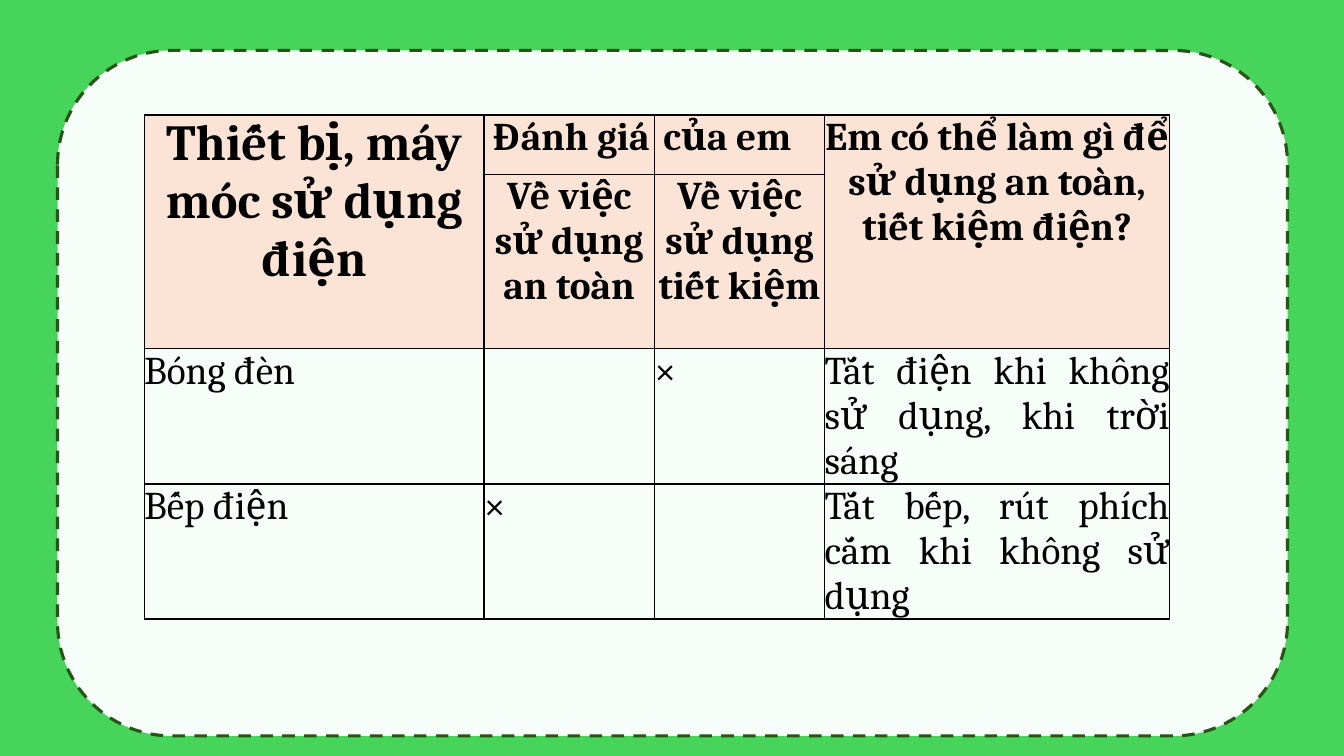
from dataclasses import dataclass

from lxml.etree import SubElement
from pptx import Presentation
from pptx.dml.color import RGBColor
from pptx.enum.dml import MSO_LINE
from pptx.enum.shapes import MSO_SHAPE
from pptx.enum.text import PP_ALIGN
from pptx.oxml import parse_xml
from pptx.oxml.ns import nsdecls, qn
from pptx.slide import Slide
from pptx.table import Table
from pptx.util import Emu, Inches, Pt

COLORS = {
    "background": "47D45A",
    "panel": "FFFFFF",
    "panel_edge": "275417",
    "heading": "FBE3D6",
    "ink": "000000",
}
FONT = "Cambria"
SLIDE_WIDTH, SLIDE_HEIGHT = Inches(13.33), Inches(7.5)
COLUMN_WEIGHTS = (3.37, 1.69, 1.69, 3.42)
ROW_WEIGHTS = (0.59, 1.73, 1.34, 1.34)
HEADING_ROWS = 2


@dataclass(frozen=True)
class Area:
    """A rectangle in percent of the slide's width and height."""

    left: float
    top: float
    width: float
    height: float

    def box(self) -> tuple[Emu, Emu, Emu, Emu]:
        return (
            Emu(round(SLIDE_WIDTH * self.left / 100)),
            Emu(round(SLIDE_HEIGHT * self.top / 100)),
            Emu(round(SLIDE_WIDTH * self.width / 100)),
            Emu(round(SLIDE_HEIGHT * self.height / 100)),
        )


@dataclass(frozen=True)
class Entry:
    row: int
    column: int
    text: str
    size: int = 28
    align: PP_ALIGN = PP_ALIGN.JUSTIFY
    row_span: int = 1
    indent: float = 0


PANEL = Area(4.28, 6.67, 91.52, 90.67)
SURVEY = Area(10.73, 15.2, 76.29, 66.67)
ENTRIES = (
    Entry(0, 0, "Thiết bị, máy móc sử dụng điện", 36, PP_ALIGN.CENTER, row_span=2),
    Entry(0, 1, "Đánh giá", indent=0.09),
    Entry(0, 2, "của em", indent=0.09),
    Entry(0, 3, "Em có thể làm gì để sử dụng an toàn, tiết kiệm điện?",
          align=PP_ALIGN.CENTER, row_span=2),
    Entry(1, 1, "Về việc sử dụng an toàn", align=PP_ALIGN.CENTER),
    Entry(1, 2, "Về việc sử dụng tiết kiệm", align=PP_ALIGN.CENTER),
    Entry(2, 0, "Bóng đèn"),
    Entry(2, 2, "×"),
    Entry(2, 3, "Tắt điện khi không sử dụng, khi trời sáng"),
    Entry(3, 0, "Bếp điện"),
    Entry(3, 1, "×"),
    Entry(3, 3, "Tắt bếp, rút phích cắm khi không sử dụng"),
)


def color(name: str) -> RGBColor:
    return RGBColor.from_string(COLORS[name])


def add_panel(slide: Slide) -> None:
    panel = slide.shapes.add_shape(MSO_SHAPE.ROUNDED_RECTANGLE, *PANEL.box())
    panel.shadow.inherit = False
    panel.fill.solid()
    panel.fill.fore_color.rgb = color("panel")
    fill_color = panel.fill._xPr.find(qn("a:solidFill"))[0]
    SubElement(fill_color, qn("a:alpha"), val="96000")
    panel.line.color.rgb = color("panel_edge")
    panel.line.width = Pt(2.25)
    panel.line.dash_style = MSO_LINE.DASH


def style_cells(table: Table) -> None:
    """Give every cell its fill, thin borders and zero margins."""
    for row_index, row in enumerate(table.rows):
        for cell in row.cells:
            cell.margin_left = cell.margin_right = 0
            cell.margin_top = cell.margin_bottom = 0
            if row_index < HEADING_ROWS:
                cell.fill.solid()
                cell.fill.fore_color.rgb = color("heading")
            else:
                cell.fill.background()
            properties = cell._tc.get_or_add_tcPr()
            for position, side in enumerate("LRTB"):
                properties.insert(position, parse_xml(
                    f'<a:ln{side} {nsdecls("a")} w="{Pt(1)}"><a:solidFill>'
                    f'<a:srgbClr val="{COLORS["ink"]}"/></a:solidFill></a:ln{side}>'
                ))


def write_entry(table: Table, entry: Entry) -> None:
    cell = table.cell(entry.row, entry.column)
    if entry.row_span > 1:
        cell.merge(table.cell(entry.row + entry.row_span - 1, entry.column))
    cell.margin_left = Inches(entry.indent)
    cell.text = entry.text
    paragraph = cell.text_frame.paragraphs[0]
    paragraph.alignment = entry.align
    paragraph.font.name = FONT
    paragraph.font.size = Pt(entry.size)
    paragraph.font.bold = entry.row < HEADING_ROWS
    paragraph.font.color.rgb = color("ink")


def add_survey(slide: Slide) -> None:
    left, top, width, height = SURVEY.box()
    table = slide.shapes.add_table(
        len(ROW_WEIGHTS), len(COLUMN_WEIGHTS), left, top, width, height
    ).table
    table.first_row = table.horz_banding = False
    for column, weight in zip(table.columns, COLUMN_WEIGHTS):
        column.width = Emu(round(width * weight / sum(COLUMN_WEIGHTS)))
    for row, weight in zip(table.rows, ROW_WEIGHTS):
        row.height = Emu(round(height * weight / sum(ROW_WEIGHTS)))
    style_cells(table)
    for entry in ENTRIES:
        write_entry(table, entry)


def main() -> None:
    presentation = Presentation()
    presentation.slide_width = SLIDE_WIDTH
    presentation.slide_height = SLIDE_HEIGHT
    slide = presentation.slides.add_slide(presentation.slide_layouts[6])
    slide.background.fill.solid()
    slide.background.fill.fore_color.rgb = color("background")
    add_panel(slide)
    add_survey(slide)
    presentation.save("out.pptx")


if __name__ == "__main__":
    main()
